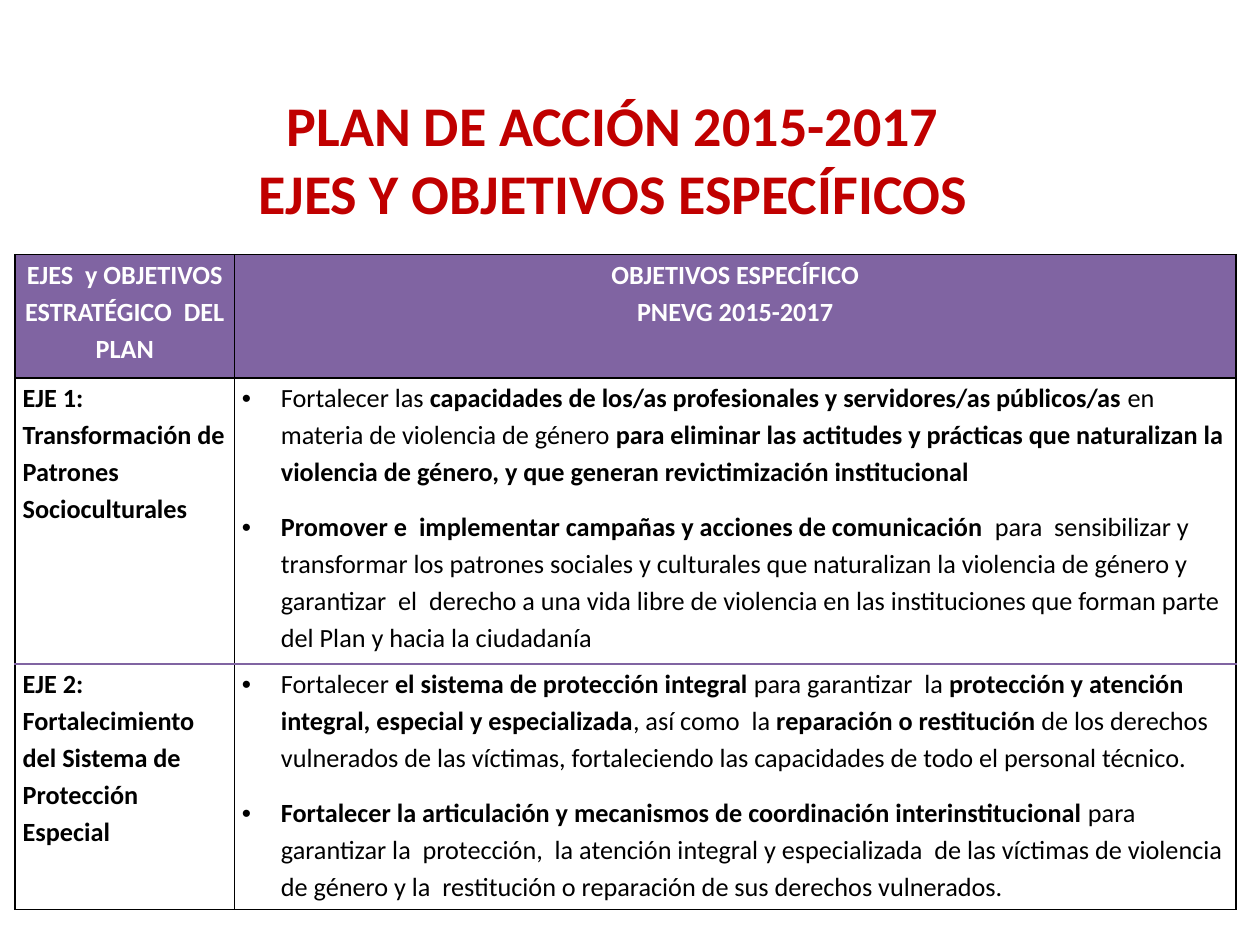
import lxml.etree
import pptx
import pptx.dml.color
import pptx.enum.text
import pptx.oxml.ns
import pptx.util

Inches = pptx.util.Inches
Pt = pptx.util.Pt
RGBColor = pptx.dml.color.RGBColor
ALIGN = pptx.enum.text.PP_ALIGN
ANCHOR = pptx.enum.text.MSO_ANCHOR
qn = pptx.oxml.ns.qn

RED = RGBColor(0xC0, 0x00, 0x00)
PURPLE = RGBColor(0x80, 0x64, 0xA2)
WHITE = RGBColor(0xFF, 0xFF, 0xFF)
BLACK = RGBColor(0x00, 0x00, 0x00)

HEADING = "PLAN DE ACCIÓN 2015-2017\vEJES Y OBJETIVOS ESPECÍFICOS"
COLUMN_WIDTHS = [1.74, 7.95]
ROW_HEIGHTS = [0.98, 2.27, 1.95]
HEADERS = [
    ["**EJES  y OBJETIVOS ESTRATÉGICO  DEL PLAN**"],
    ["**OBJETIVOS ESPECÍFICO**", "**PNEVG 2015-2017**"],
]
AXES = [
    (
        "**EJE 1: Transformación de Patrones Socioculturales**",
        [
            "Fortalecer las **capacidades de los/as profesionales y servidores/as públicos/as **"
            "en materia de violencia de género **para eliminar las actitudes y prácticas que "
            "naturalizan la violencia de género, y que generan revictimización institucional**",
            "**Promover e  implementar campañas y acciones de comunicación  **para  sensibilizar y "
            "transformar los patrones sociales y culturales que naturalizan la violencia de género y "
            "garantizar  el  derecho a una vida libre de violencia en las instituciones que forman "
            "parte del Plan y hacia la ciudadanía",
        ],
    ),
    (
        "**EJE 2: Fortalecimiento del Sistema de Protección Especial**",
        [
            "Fortalecer **el sistema de protección integral **para garantizar  la **protección y "
            "atención integral, especial y especializada**, así como  la **reparación o restitución** "
            "de los derechos vulnerados de las víctimas, fortaleciendo las capacidades de todo el "
            "personal técnico.",
            "**Fortalecer la articulación y mecanismos de coordinación interinstitucional **para "
            "garantizar la  protección,  la atención integral y especializada  de las víctimas de "
            "violencia de género y la  restitución o reparación de sus derechos vulnerados.",
        ],
    ),
]

TITLE_FONT = {"name": "Calibri", "size": Pt(32), "bold": True}
CELL_FONT = {"name": "Calibri", "size": Pt(15)}
CELL_FORMAT = {
    "margin_left": Inches(0.06),
    "margin_right": Inches(0.06),
    "margin_top": 0,
    "margin_bottom": 0,
    "vertical_anchor": ANCHOR.TOP,
}
HEADER_PARAGRAPH = {"alignment": ALIGN.CENTER, "line_spacing": 1.15}
AXIS_PARAGRAPH = {"alignment": ALIGN.LEFT, "line_spacing": 1.15}
OBJECTIVE_PARAGRAPH = AXIS_PARAGRAPH | {"space_after": Pt(10)}


def apply_format(target, values):
    for name, value in values.items():
        setattr(target, name, value)


def add_bullet(paragraph):
    properties = paragraph._p.get_or_add_pPr()
    indent = Inches(0.31)
    properties.set("marL", str(indent))
    properties.set("indent", str(-indent))
    lxml.etree.SubElement(properties, qn("a:buFont"), typeface="Arial")
    lxml.etree.SubElement(properties, qn("a:buChar"), char="•")


def draw_borders(cell, colors):
    properties = cell._tc.get_or_add_tcPr()
    for side in "LRTB":
        line = lxml.etree.SubElement(properties, qn(f"a:ln{side}"), w=str(Pt(1)))
        solid = lxml.etree.SubElement(line, qn("a:solidFill"))
        lxml.etree.SubElement(solid, qn("a:srgbClr"), val=str(colors.get(side, BLACK)))


def fill_cell(cell, texts, paragraph_format, color, background, borders, bulleted=False):
    apply_format(cell, CELL_FORMAT)
    draw_borders(cell, borders)
    cell.fill.solid()
    cell.fill.fore_color.rgb = background
    frame = cell.text_frame
    for index, text in enumerate(texts):
        paragraph = frame.add_paragraph() if index else frame.paragraphs[0]
        apply_format(paragraph, paragraph_format)
        if bulleted:
            add_bullet(paragraph)
        for position, piece in enumerate(text.split("**")):
            if piece:
                run = paragraph.add_run()
                run.text = piece
                apply_format(run.font, CELL_FONT | {"bold": position % 2 == 1})
                run.font.color.rgb = color


def place_title(slide, left, top, width, height):
    title = slide.shapes.title
    apply_format(title, {"left": left, "top": top, "width": width, "height": height})
    frame = title.text_frame
    frame.text = HEADING
    frame.vertical_anchor = ANCHOR.MIDDLE
    paragraph = frame.paragraphs[0]
    paragraph.alignment = ALIGN.CENTER
    for run in paragraph.runs:
        apply_format(run.font, TITLE_FONT)
        run.font.color.rgb = RED


def place_objectives(slide, left, top, width, height):
    table = slide.shapes.add_table(
        len(ROW_HEIGHTS), len(COLUMN_WIDTHS), left, top, width, height
    ).table
    for column, share in zip(table.columns, COLUMN_WIDTHS):
        column.width = int(width * share / sum(COLUMN_WIDTHS))
    for row, share in zip(table.rows, ROW_HEIGHTS):
        row.height = int(height * share / sum(ROW_HEIGHTS))
    for column, texts in enumerate(HEADERS):
        fill_cell(table.cell(0, column), texts, HEADER_PARAGRAPH, WHITE, PURPLE, {})
    for row, (axis, objectives) in enumerate(AXES, start=1):
        borders = {"B" if row == 1 else "T": PURPLE}
        fill_cell(table.cell(row, 0), [axis], AXIS_PARAGRAPH, BLACK, WHITE, borders)
        fill_cell(
            table.cell(row, 1), objectives, OBJECTIVE_PARAGRAPH, BLACK, WHITE, borders, bulleted=True
        )


def main():
    presentation = pptx.Presentation()
    presentation.slide_width = Inches(10)
    presentation.slide_height = Inches(7.5)
    slide = presentation.slides.add_slide(presentation.slide_layouts[5])
    place_title(slide, Inches(0), Inches(0.63), Inches(9.73), Inches(1.25))
    place_objectives(slide, Inches(0.12), Inches(2.02), Inches(9.69), Inches(5.2))
    presentation.save("out.pptx")


if __name__ == "__main__":
    main()
